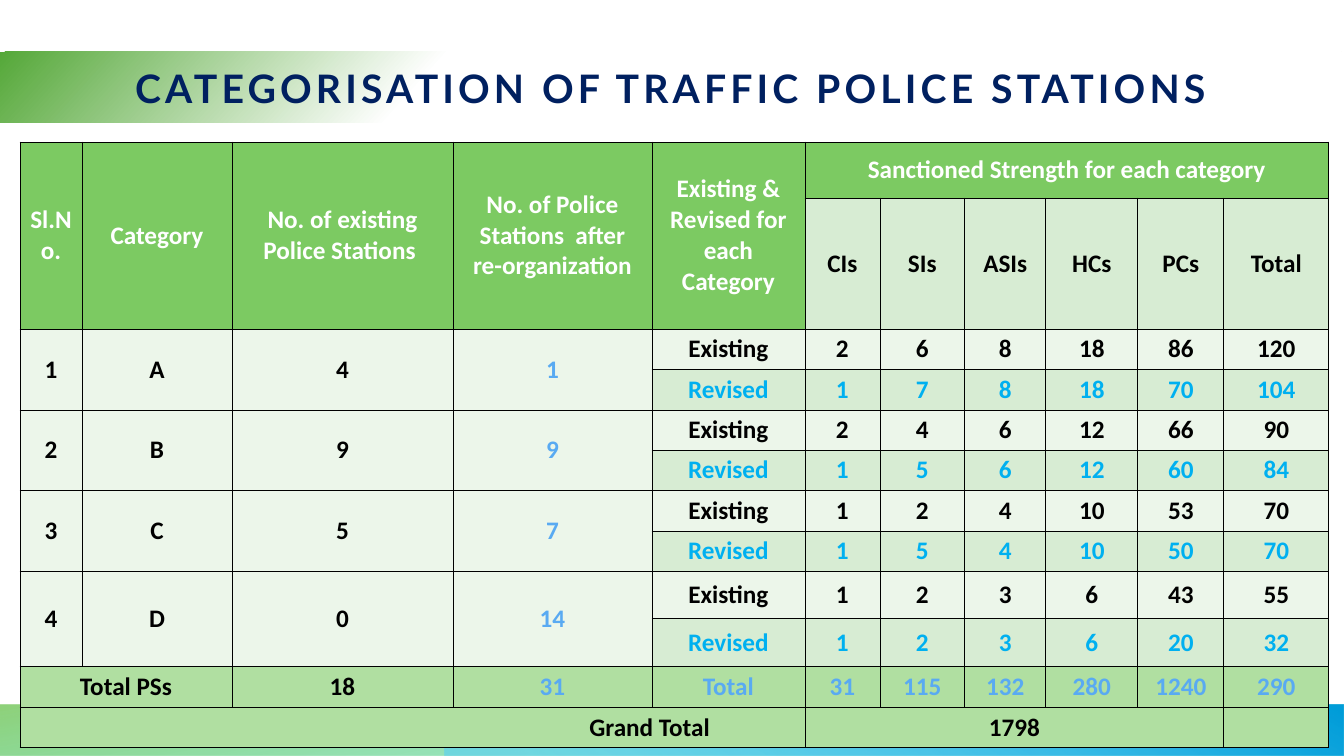
from lxml import etree
from pptx import Presentation
from pptx.dml.color import RGBColor
from pptx.enum.shapes import MSO_SHAPE
from pptx.enum.text import MSO_ANCHOR, PP_ALIGN
from pptx.oxml import parse_xml
from pptx.oxml.ns import nsdecls, qn
from pptx.util import Emu, Pt

# Content
TITLE = "CATEGORISATION OF TRAFFIC POLICE STATIONS"
HEADINGS = ["Sl.No.", "Category", "No. of existing Police Stations ",
            "No. of Police Stations  after re-organization",
            "Existing & Revised for each Category"]
STRENGTH_HEADING = "Sanctioned Strength for each category"
RANKS = ["CIs", "SIs", "ASIs", "HCs", "PCs", "Total"]
# category, stations now, stations after, existing strength, revised strength
CATEGORIES = [
    ("A", 4, 1, [2, 6, 8, 18, 86, 120], [1, 7, 8, 18, 70, 104]),
    ("B", 9, 9, [2, 4, 6, 12, 66, 90], [1, 5, 6, 12, 60, 84]),
    ("C", 5, 7, [1, 2, 4, 10, 53, 70], [1, 5, 4, 10, 50, 70]),
    ("D", 0, 14, [1, 2, 3, 6, 43, 55], [1, 2, 3, 6, 20, 32]),
]
TOTALS = [31, "Total", 31, 115, 132, 280, 1240, 290]

# Layout in px
SCALE = 914400 / 100.8
SLIDE_SIZE = (1344, 756)
TABLE_LEFT, TABLE_TOP = 20, 142
COLUMNS = [62, 150, 221, 199, 153, 75, 85, 81, 92, 86, 105]
ROWS = [56, 131] + [40, 41, 40] * 2 + [48, 48, 41, 40]
SIDE_MARGIN, TOP_MARGIN = 10, 4
GRAND_TOTAL_MARGIN = 95

# Colours
BLACK, WHITE, NAVY = "000000", "FFFFFF", "002060"
SKY, CYAN = "59AAF2", "00B0F0"
HEADER, BAND, PALE, TOTAL = "7CCA62", "D7ECD3", "ECF6EA", "B0DFA1"


def px(value):
    return Emu(round(value * SCALE))


def colour(value):
    return RGBColor.from_string(value)


def set_font(paragraph, name, size, value):
    font = paragraph.font
    font.name, font.size, font.bold = name, Pt(size), True
    font.color.rgb = colour(value)


def add_bar(slide, box, stops, angle, flip=None):
    """Rectangle with a gradient of (position, colour, opacity) stops."""
    shape = slide.shapes.add_shape(MSO_SHAPE.RECTANGLE, *map(px, box))
    shape.shadow.inherit = False
    shape.line.fill.background()
    marks = "".join(
        f'<a:gs pos="{position * 1000}"><a:srgbClr val="{value}">'
        f'<a:alpha val="{opacity * 1000}"/></a:srgbClr></a:gs>'
        for position, value, opacity in stops)
    properties = shape._element.spPr
    properties.find(qn("a:prstGeom")).addnext(parse_xml(
        f'<a:gradFill {nsdecls("a")} rotWithShape="1"><a:gsLst>{marks}</a:gsLst>'
        f'<a:lin ang="{angle * 60000}" scaled="0"/></a:gradFill>'))
    if flip:
        properties.find(qn("a:xfrm")).set(flip, "1")
    return shape


def add_borders(cell):
    properties = cell._tc.get_or_add_tcPr()
    for index, side in enumerate(("lnL", "lnR", "lnT", "lnB")):
        line = etree.Element(qn(f"a:{side}"), w=str(Pt(0.5)))
        fill = etree.SubElement(line, qn("a:solidFill"))
        etree.SubElement(fill, qn("a:srgbClr"), val=BLACK)
        properties.insert(index, line)


def put(table, row, column, text, fill, ink=BLACK, down=1, across=1):
    cell = table.cell(row, column)
    if down * across > 1:
        cell.merge(table.cell(row + down - 1, column + across - 1))
    cell.fill.solid()
    cell.fill.fore_color.rgb = colour(fill)
    cell.vertical_anchor = MSO_ANCHOR.MIDDLE
    cell.margin_left = cell.margin_right = px(SIDE_MARGIN)
    cell.margin_top = cell.margin_bottom = px(TOP_MARGIN)
    cell.text = str(text)
    paragraph = cell.text_frame.paragraphs[0]
    paragraph.alignment = PP_ALIGN.CENTER
    set_font(paragraph, "Calibri", 18, ink)
    return cell


def put_row(table, row, column, values, fill, ink=BLACK):
    for offset, value in enumerate(values):
        put(table, row, column + offset, value, fill, ink)


def fill_table(table):
    # Headings
    for column, heading in enumerate(HEADINGS):
        put(table, 0, column, heading, HEADER, WHITE, down=2)
    put(table, 0, 5, STRENGTH_HEADING, HEADER, WHITE, across=6)
    put_row(table, 1, 5, RANKS, BAND)

    # Two rows for each category
    for index, (name, now, after, existing, revised) in enumerate(CATEGORIES):
        row = 2 + 2 * index
        for column, value in enumerate((index + 1, name, now, after)):
            put(table, row, column, value, PALE, SKY if column == 3 else BLACK, down=2)
        put_row(table, row, 4, ["Existing"] + existing, PALE)
        put_row(table, row + 1, 4, ["Revised"] + revised, BAND, CYAN)

    # Totals
    put(table, 10, 0, "Total PSs", TOTAL, across=2)
    put(table, 10, 2, 18, TOTAL)
    put_row(table, 10, 3, TOTALS, TOTAL, SKY)
    grand_total = put(table, 11, 0, "Grand Total", TOTAL, across=5)
    grand_total.margin_right = px(GRAND_TOTAL_MARGIN)
    grand_total.text_frame.paragraphs[0].alignment = PP_ALIGN.RIGHT
    put(table, 11, 5, 1798, TOTAL, across=5)
    put(table, 11, 10, "", TOTAL)


def main():
    presentation = Presentation()
    presentation.slide_width, presentation.slide_height = map(px, SLIDE_SIZE)
    slide = presentation.slides.add_slide(presentation.slide_layouts[6])

    # Footer bars
    add_bar(slide, (0, 705, 1344, 51),
            [(14, "10CF9B", 28), (100, "7CCA62", 85)], 100, "flipV")
    add_bar(slide, (445, 705, 899, 51),
            [(9, "4FCEFF", 55), (99, "009DD9", 100)], 240, "flipH")

    # Title
    title = add_bar(slide, (0, 52, 1342, 71),
                    [(0, "55A839", 100), (32, WHITE, 100)], 42)
    frame = title.text_frame
    frame.word_wrap = True
    frame.vertical_anchor = MSO_ANCHOR.MIDDLE
    paragraph = frame.paragraphs[0]
    paragraph.text = TITLE
    paragraph.alignment = PP_ALIGN.CENTER
    set_font(paragraph, "Lato", 28, NAVY)
    paragraph.runs[0].font._element.set("spc", "300")

    # Table
    table = slide.shapes.add_table(
        len(ROWS), len(COLUMNS), px(TABLE_LEFT), px(TABLE_TOP),
        px(sum(COLUMNS)), px(sum(ROWS))).table
    table.first_row = table.horz_banding = False
    for column, width in zip(table.columns, COLUMNS):
        column.width = px(width)
    for row, height in zip(table.rows, ROWS):
        row.height = px(height)
    fill_table(table)
    for cell in table.iter_cells():
        add_borders(cell)

    presentation.save("out.pptx")


if __name__ == "__main__":
    main()
